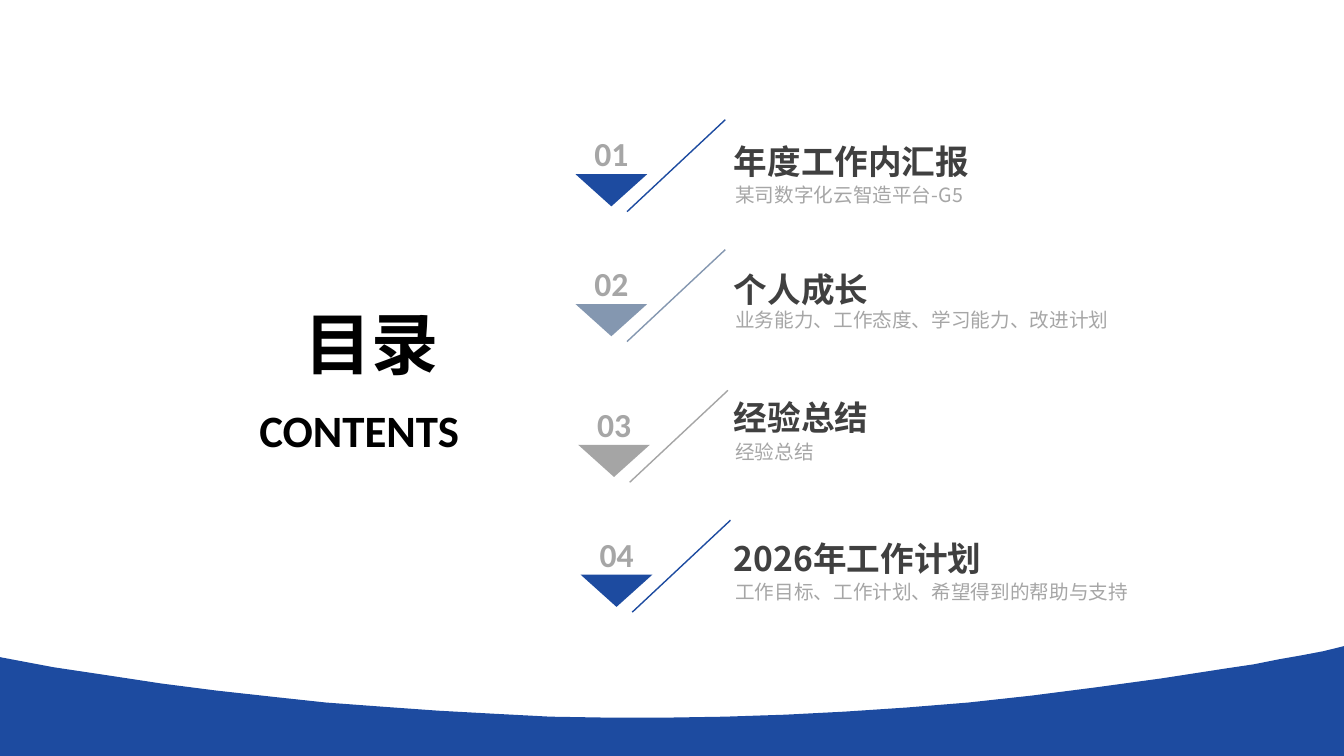
from lxml import etree
from pptx import Presentation
from pptx.dml.color import RGBColor
from pptx.enum.shapes import MSO_CONNECTOR
from pptx.enum.text import MSO_ANCHOR, MSO_AUTO_SIZE, PP_ALIGN
from pptx.oxml.ns import qn
from pptx.util import Pt

STRAIGHT = MSO_CONNECTOR.STRAIGHT
LEFT, CENTER = PP_ALIGN.LEFT, PP_ALIGN.CENTER
TOP, MIDDLE, BOTTOM = MSO_ANCHOR.TOP, MSO_ANCHOR.MIDDLE, MSO_ANCHOR.BOTTOM
GROW = MSO_AUTO_SIZE.SHAPE_TO_FIT_TEXT

COLORS = {
    "blue": "1D4BA0",
    "slate": "8497B0",
    "gray": "A5A5A5",
    "caption": "A6A6A6",
    "title": "404040",
    "black": "000000",
}
CJK, LATIN = "Noto Sans CJK SC", "Calibri"

SLIDE_W, SLIDE_H = 960, 540
WAVE_BOTTOM = 541.4
WAVE_EDGE = [
    (0, 469.4), (38.2, 476.6), (77, 482.4), (115.2, 488.2), (154.1, 493.2),
    (193, 497.5), (232.6, 501.8), (272.2, 504.7), (312.5, 507.6),
    (352.8, 509.8), (393.1, 511.9), (434.2, 512.6), (475.9, 512.6),
    (517.7, 511.9), (560.9, 510.5), (603.4, 508.3), (647.3, 505.4),
    (691.9, 501.8), (737.3, 496.8), (782.6, 491), (829.4, 484.6),
    (876.2, 477.4), (895.7, 474.5), (913.7, 470.9), (930.2, 468),
    (945.4, 465.1), (SLIDE_W, 461.5),
]

# number, title, caption, color, marker (x, y), title top, caption top, caption line spacing
CHAPTERS = [
    ("01", "年度工作内汇报", "某司数字化云智造平台-G5", "blue",
     (411.1, 124.4), 88.6, 127.4, 1),
    ("02", "个人成长", "业务能力、工作态度、学习能力、改进计划", "slate",
     (411.1, 217.2), 180, 216.7, 1),
    ("03", "经验总结", "经验总结", "gray",
     (413, 317.7), 271.4, 311, 1),
    ("04", "2026年工作计划", "工作目标、工作计划、希望得到的帮助与支持", "blue",
     (414.8, 410.5), 372.2, 407.5, 1.2),
]


def rgb(color):
    return RGBColor.from_string(COLORS[color])


def add_label(slide, text, box, size, color, font_name, bold=True, align=LEFT,
              anchor=TOP, spacing=1, inset=(7.2, 3.6)):
    label = slide.shapes.add_textbox(*map(Pt, box))
    frame = label.text_frame
    frame.word_wrap = True
    frame.auto_size = GROW
    frame.vertical_anchor = anchor
    frame.margin_left = frame.margin_right = Pt(inset[0])
    frame.margin_top = frame.margin_bottom = Pt(inset[1])
    paragraph = frame.paragraphs[0]
    paragraph.text = text
    paragraph.alignment = align
    paragraph.line_spacing = spacing
    font = paragraph.font
    font.size, font.bold, font.name = Pt(size), bold, font_name
    font.color.rgb = rgb(color)
    # East Asian glyphs take their own typeface setting
    properties = paragraph._p.pPr.find(qn("a:defRPr"))
    etree.SubElement(properties, qn("a:ea")).set("typeface", font_name)


def add_outline(slide, points, color):
    start, *rest = [(Pt(x), Pt(y)) for x, y in points]
    builder = slide.shapes.build_freeform(*start)
    builder.add_line_segments(rest, close=True)
    outline = builder.convert_to_shape()
    outline.shadow.inherit = False
    outline.fill.solid()
    outline.fill.fore_color.rgb = rgb(color)
    outline.line.fill.background()


def add_slash(slide, start, end, color):
    slash = slide.shapes.add_connector(STRAIGHT, *map(Pt, (*start, *end)))
    slash.line.color.rgb = rgb(color)
    slash.line.width = Pt(1)
    etree.SubElement(slash._element.spPr, qn("a:effectLst"))


def add_chapter(slide, number, title, caption, color, marker, title_top,
                caption_top, caption_spacing):
    x, y = marker
    add_label(slide, title, (517.2, title_top, 258, 44.6), 24, "title", CJK,
              spacing=1.3)
    add_label(slide, caption, (518.1, caption_top, 331, 24.5), 14, "caption",
              CJK, bold=False, spacing=caption_spacing)
    add_slash(slide, (x + 107, y - 38.9), (x + 36.8, y + 26.8), color)
    add_outline(slide, [(x, y), (x + 51.2, y), (x + 25.6, y + 23)], color)
    add_label(slide, number, (x - 1.4, y - 29.4, 54, 28.8), 24, "caption",
              LATIN, align=CENTER, anchor=BOTTOM, inset=(0, 0))


def main():
    prs = Presentation()
    prs.slide_width, prs.slide_height = Pt(SLIDE_W), Pt(SLIDE_H)
    slide = prs.slides.add_slide(prs.slide_layouts[6])

    # Bottom wave
    corners = [(SLIDE_W, WAVE_BOTTOM), (0, WAVE_BOTTOM)]
    add_outline(slide, WAVE_EDGE + corners, "blue")

    # Heading
    add_label(slide, "目录", (188.6, 215.3, 154, 58.3), 48, "black", CJK,
              align=CENTER, anchor=MIDDLE, inset=(0, 0))
    add_label(slide, "CONTENTS", (130.3, 288, 252.7, 38.9), 32, "black", LATIN,
              align=CENTER, inset=(0, 0))

    # Chapter list
    for chapter in CHAPTERS:
        add_chapter(slide, *chapter)

    prs.save("out.pptx")


if __name__ == "__main__":
    main()
